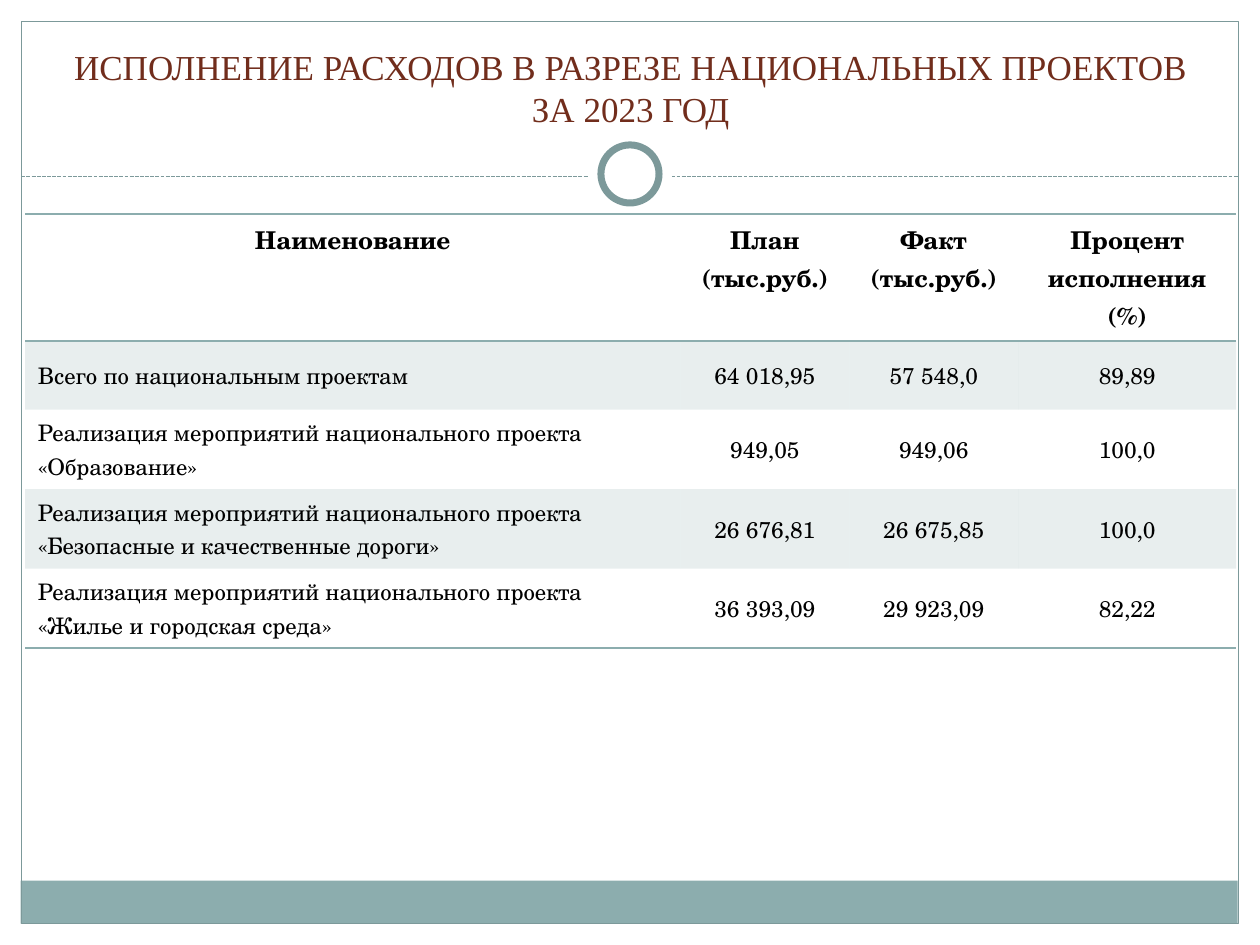
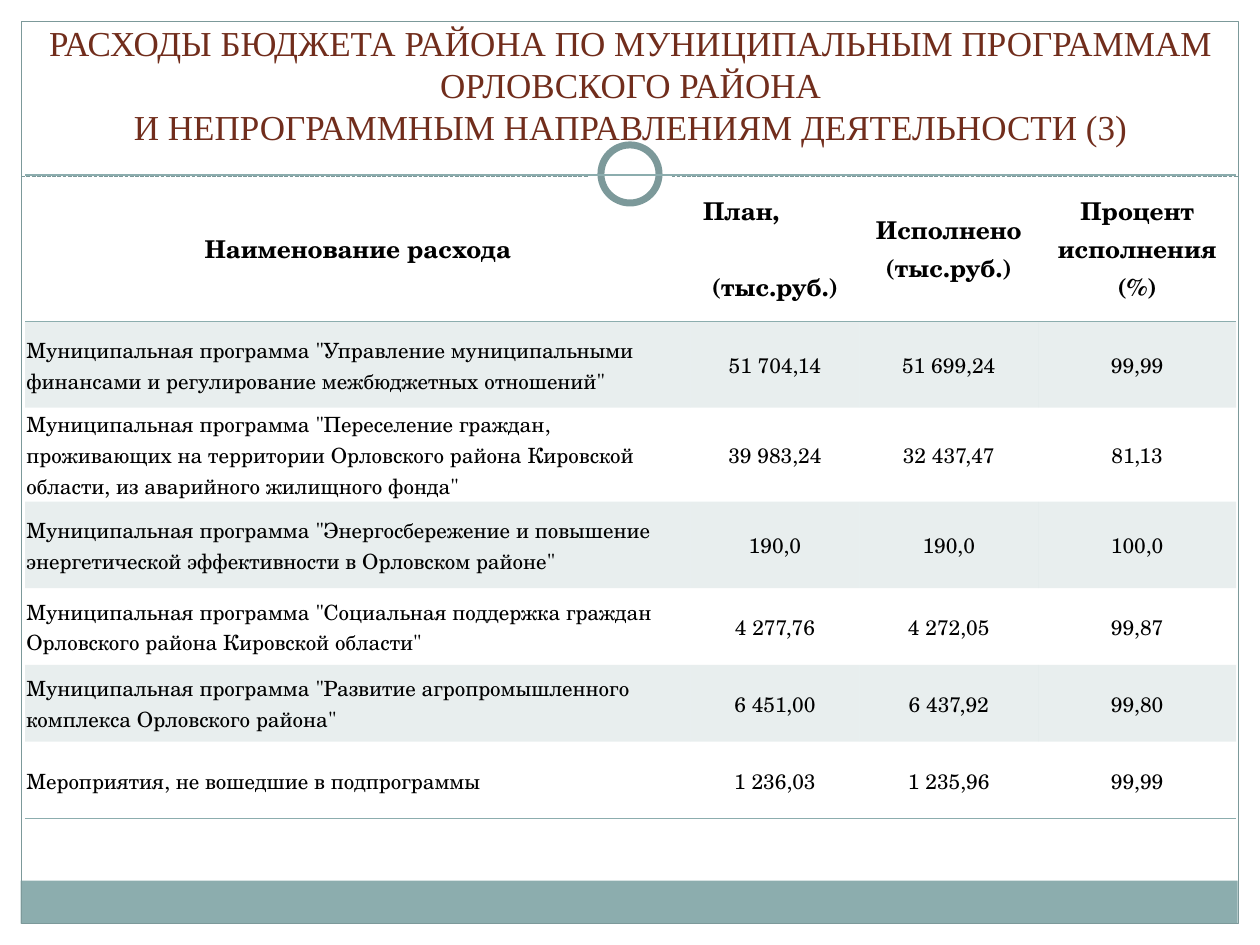
import pptx
import pptx.util
import pptx.dml.color
import pptx.enum.dml
import pptx.enum.shapes
import pptx.enum.text
import pptx.oxml
import pptx.oxml.ns
from lxml import etree

Pt = pptx.util.Pt
ALIGN = pptx.enum.text.PP_ALIGN
ANCHOR = pptx.enum.text.MSO_ANCHOR
SHAPE = pptx.enum.shapes.MSO_SHAPE
qn = pptx.oxml.ns.qn

TEAL, FRAME, BROWN, BLACK, WHITE = "8CADAE", "7C999A", "712D1C", "000000", "FFFFFF"
TITLE_FONT = {"name": "Times New Roman", "size": Pt(20), "bold": False}
HEAD_FONT = {"name": "TeX Gyre Schola", "size": Pt(14), "bold": True}
NO_TABLE_STYLE = "{2D5ABB26-0587-4C30-8999-92F81FD0307C}"
LEFT, WIDTH = 14.4, 692


def rgb(color):
    return pptx.dml.color.RGBColor.from_string(color)


def assign(obj, values):
    for name, value in values.items():
        setattr(obj, name, value)


class Deck:
    def __init__(self):
        self.prs = pptx.Presentation()
        assign(self.prs, {"slide_width": Pt(720), "slide_height": Pt(540)})
        self.s = None

    def slide(self):
        """Start a slide with the shared frame, footer band and ring."""
        self.s = self.prs.slides.add_slide(self.prs.slide_layouts[5])
        self.shape(SHAPE.RECTANGLE, 11.8, 503.3, 695.5, 24.5, fill=TEAL)
        self.shape(SHAPE.RECTANGLE, 12.2, 12.2, 695.5, 515.5, line=FRAME)
        self.dashed_line(12.2, 707.7, 100.8)
        self.shape(SHAPE.OVAL, 336, 75.6, 48, 48, fill=WHITE)
        self.shape(SHAPE.OVAL, 343.4, 82.8, 33.2, 33.2, fill=WHITE, line=FRAME, weight=4)

    def shape(self, kind, x, y, w, h, fill=None, line=None, weight=0.75):
        sp = self.s.shapes.add_shape(kind, Pt(x), Pt(y), Pt(w), Pt(h))
        sp.shadow.inherit = False
        for part, color in ((sp.fill, fill), (sp.line.fill, line)):
            if color:
                part.solid()
                part.fore_color.rgb = rgb(color)
            else:
                part.background()
        if line:
            sp.line.width = Pt(weight)

    def dashed_line(self, x1, x2, y):
        cn = self.s.shapes.add_connector(
            pptx.enum.shapes.MSO_CONNECTOR.STRAIGHT, Pt(x1), Pt(y), Pt(x2), Pt(y))
        cn.line.color.rgb = rgb(FRAME)
        assign(cn.line, {"width": Pt(0.75),
                         "dash_style": pptx.enum.dml.MSO_LINE.SQUARE_DOT})
        etree.SubElement(cn._element.spPr, qn("a:effectLst"))

    def paragraph(self, p, text, font, color, align):
        p.alignment = align
        p.text = text
        for r in p.runs:
            assign(r.font, font)
            r.font.color.rgb = rgb(color)

    def title(self, text, top, height, bottom_inset=3.6):
        sp = self.s.shapes.title
        assign(sp, {"left": Pt(LEFT), "top": Pt(top),
                    "width": Pt(WIDTH), "height": Pt(height)})
        assign(sp.text_frame, {"word_wrap": True, "vertical_anchor": ANCHOR.BOTTOM,
                               "auto_size": pptx.enum.text.MSO_AUTO_SIZE.NONE,
                               "margin_bottom": Pt(bottom_inset)})
        self.paragraph(sp.text_frame.paragraphs[0], text, TITLE_FONT, BROWN, ALIGN.CENTER)
        self.s.shapes._spTree.append(sp._element)  # in front of the ring

    def border(self, cell, sides):
        tc_pr = cell._tc.get_or_add_tcPr()
        for i, side in enumerate(sides):
            ln = etree.Element(qn(f"a:ln{side}"), w="12700")
            fill = etree.SubElement(ln, qn("a:solidFill"))
            etree.SubElement(fill, qn("a:srgbClr"), val=TEAL)
            tc_pr.insert(i, ln)

    def tint(self, cell):
        cell.fill.solid()
        cell.fill.fore_color.rgb = rgb(TEAL)
        color = cell._tc.tcPr.find(qn("a:solidFill")).find(qn("a:srgbClr"))
        etree.SubElement(color, qn("a:alpha"), val="20000")

    def table(self, top, widths, heights, rows, size, head_anchor, insets=None):
        """Draw rows; the first is the header, whose cells are lists of paragraphs."""
        table = self.s.shapes.add_table(
            len(rows), len(widths), Pt(LEFT), Pt(top), Pt(WIDTH), Pt(sum(heights))).table
        table._tbl.tblPr.find(qn("a:tableStyleId")).text = NO_TABLE_STYLE
        for col, width in zip(table.columns, widths):
            col.width = Pt(width)
        body_font = {**HEAD_FONT, "size": Pt(size), "bold": False}
        for i, (row, height) in enumerate(zip(rows, heights)):
            table.rows[i].height = Pt(height)
            for j, value in enumerate(row):
                cell = table.cell(i, j)
                cell.vertical_anchor = ANCHOR.MIDDLE if i else head_anchor
                if i:
                    assign(cell, insets or {})
                lines = [value] if i else value
                align = ALIGN.LEFT if i and j == 0 else ALIGN.CENTER
                for k, line in enumerate(lines):
                    tf = cell.text_frame
                    p = tf.add_paragraph() if k else tf.paragraphs[0]
                    self.paragraph(p, line, body_font if i else HEAD_FONT, BLACK, align)
                self.border(cell, "TB" if i == 0 else "B" if i == len(rows) - 1 else "")
                if i % 2:
                    self.tint(cell)
                else:
                    cell.fill.background()
        return table


def national_projects(deck):
    deck.slide()
    deck.title("ИСПОЛНЕНИЕ РАСХОДОВ В РАЗРЕЗЕ НАЦИОНАЛЬНЫХ ПРОЕКТОВ\vЗА 2023 ГОД", 18, 59.8)
    project = "Реализация мероприятий национального проекта "
    rows = [
        (["Наименование"], ["План", "(тыс.руб.)"], ["Факт", "(тыс.руб.)"],
         ["Процент", "исполнения (%)"]),
        ("Всего по национальным проектам", "64 018,95", "57 548,0", "89,89"),
        (project + "«Образование»", "949,05", "949,06", "100,0"),
        (project + "«Безопасные и качественные дороги»", "26 676,81", "26 675,85", "100,0"),
        (project + "«Жилье и городская среда»", "36 393,09", "29 923,09", "82,22"),
    ]
    deck.table(122.4, [374.4, 96.5, 96.5, 124.6], [44] + [39.4] * 4, rows, 13, ANCHOR.TOP)


def municipal_programmes(deck):
    deck.slide()
    deck.title("РАСХОДЫ БЮДЖЕТА РАЙОНА ПО МУНИЦИПАЛЬНЫМ ПРОГРАММАМ ОРЛОВСКОГО РАЙОНА\v"
               "И НЕПРОГРАММНЫМ НАПРАВЛЕНИЯМ ДЕЯТЕЛЬНОСТИ (3)", 9.4, 102.2, 27.4)
    programme = "Муниципальная программа "
    rows = [
        (["Наименование расхода"], ["План,", "(тыс.руб.)"], ["Исполнено (тыс.руб.)"],
         ["Процент исполнения (%)"]),
        (programme + '"Управление муниципальными финансами и регулирование '
         'межбюджетных отношений"', "51 704,14", "51 699,24", "99,99"),
        (programme + '"Переселение граждан, проживающих на территории Орловского района '
         'Кировской области, из аварийного жилищного фонда"',
         "39 983,24", "32 437,47", "81,13"),
        (programme + '"Энергосбережение и повышение энергетической эффективности '
         'в Орловском районе"', "190,0", "190,0", "100,0"),
        (programme + '"Социальная поддержка граждан Орловского района Кировской области"',
         "4 277,76", "4 272,05", "99,87"),
        (programme + '"Развитие агропромышленного комплекса Орловского района"',
         "6 451,00", "6 437,92", "99,80"),
        ("Мероприятия, не вошедшие в подпрограммы", "1 236,03", "1 235,96", "99,99"),
    ]
    insets = {"margin_left": Pt(0.7), "margin_right": Pt(0.7),
              "margin_top": Pt(0.7), "margin_bottom": Pt(0)}
    table = deck.table(100.1, [380.2, 96.5, 102.2, 113.1], [83.5] + [49.4] * 3 + [43.9] * 3,
                       rows, 12, ANCHOR.MIDDLE, insets)
    plan, unit = table.cell(0, 1).text_frame.paragraphs
    plan.alignment = ALIGN.LEFT
    unit.space_before = Pt(21.7)


def main():
    deck = Deck()
    national_projects(deck)
    municipal_programmes(deck)
    deck.prs.save("out.pptx")


if __name__ == "__main__":
    main()
